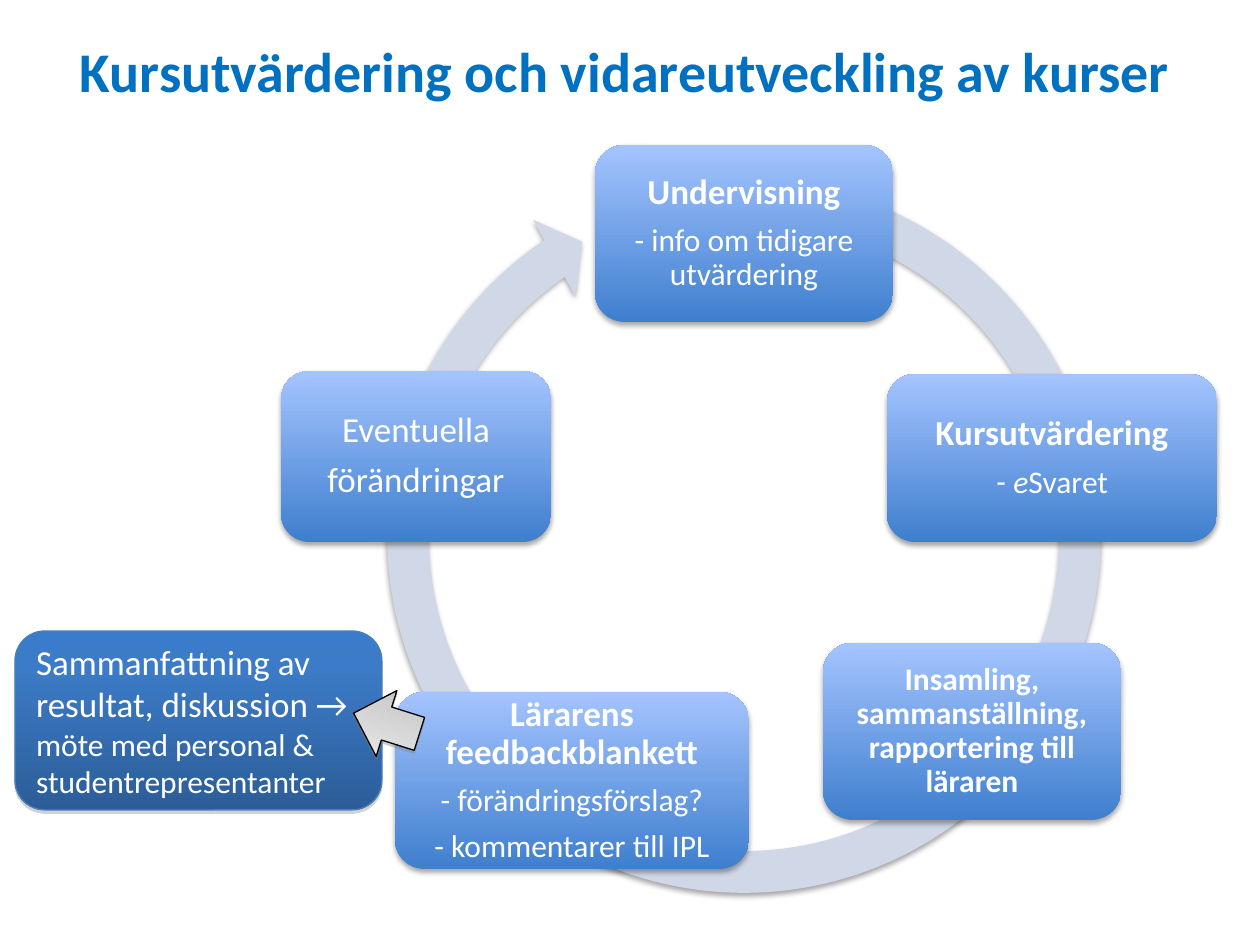
import pptx
import pptx.util
import pptx.dml.color
import pptx.enum.shapes
import pptx.enum.text
import pptx.oxml
import pptx.oxml.ns

RGB = pptx.dml.color.RGBColor
SHAPE = pptx.enum.shapes.MSO_SHAPE
ALIGN = pptx.enum.text.PP_ALIGN
ANCHOR = pptx.enum.text.MSO_ANCHOR

PX = 914400 / 126
FONT = "Calibri"
WHITE = RGB(0xFF, 0xFF, 0xFF)
BLACK = RGB(0, 0, 0)
GRAY = RGB(0x80, 0x80, 0x80)
TITLE_BLUE = RGB(0x00, 0x70, 0xC0)
RING = RGB(0xD0, 0xD8, 0xE8)
NOTE_LINE = RGB(0x4A, 0x7E, 0xBB)
STEP_STOPS = [(0, RGB(0x3F, 0x7F, 0xCE)), (100, RGB(0xA4, 0xC4, 0xFF))]
NOTE_STOPS = [(0, RGB(0x3A, 0x7C, 0xCB)), (20, RGB(0x3C, 0x7B, 0xC7)),
              (100, RGB(0x2C, 0x5D, 0x98))]
ARROW_STOPS = [(0, RGB(0xED, 0xED, 0xED)), (65, RGB(0xD0, 0xD0, 0xD0)),
               (100, RGB(0xBC, 0xBC, 0xBC))]

STEPS = [
    ((595, 145, 298, 177), 10, [[("Undervisning", 20, "b")],
                                [("- info om tidigare utvärdering", 18, "")]]),
    ((887, 374, 330, 168), 10, [[("Kursutvärdering", 20, "b")],
                                [("- ", 19, "i"), ("e", 18, "i"), ("Svaret", 18, "")]]),
    ((823, 643, 298, 177), 9,
     [[("Insamling, sammanställning, rapportering till läraren", 18, "b")]]),
    ((395, 692, 354, 177), 10, [[("Lärarens feedbackblankett", 20, "b")],
                                [("- förändringsförslag?", 18, "")],
                                [("- kommentarer till IPL", 18, "")]]),
    ((281, 371, 270, 171), 10, [[("Eventuella", 20, "")], [("förändringar", 20, "")]]),
]


def px(n):
    return pptx.util.Emu(round(n * PX))


def add_xml(parent, body):
    ns = pptx.oxml.ns.nsdecls("a")
    el = pptx.oxml.parse_xml(body.replace(" ", f" {ns} ", 1))
    parent.append(el)
    return el


def set_gradient(sp, stops, angle):
    sp.fill.gradient()
    grad = sp._element.spPr.find(pptx.oxml.ns.qn("a:gradFill"))
    for child in list(grad):
        grad.remove(child)
    gs = "".join(f'<a:gs pos="{pos * 1000}"><a:srgbClr val="{color}"/></a:gs>'
                 for pos, color in stops)
    add_xml(grad, f"<a:gsLst >{gs}</a:gsLst>")
    add_xml(grad, f'<a:lin ang="{angle * 60000}" scaled="0"/>')


def set_shadow(sp, color, alpha, blur, dist):
    sp.shadow.inherit = False
    effects = sp._element.spPr.find(pptx.oxml.ns.qn("a:effectLst"))
    add_xml(effects, f'<a:outerShdw blurRad="{round(blur * 12700)}" '
                     f'dist="{round(dist * 12700)}" dir="5400000" rotWithShape="0">'
                     f'<a:srgbClr val="{color}"><a:alpha val="{alpha * 1000}"/>'
                     f'</a:srgbClr></a:outerShdw>')


def set_line(sp, color):
    if color is None:
        sp.line.fill.background()
    else:
        sp.line.color.rgb = color
        sp.line.width = pptx.util.Pt(0.75)


def add_runs(p, runs, color):
    for text, size, style in runs:
        r = p.add_run()
        r.text = text
        r.font.name = FONT
        r.font.size = pptx.util.Pt(size)
        r.font.bold = "b" in style
        r.font.italic = "i" in style
        r.font.color.rgb = color


def add_shape(s, kind, box, line=None):
    sp = s.shapes.add_shape(kind, *map(px, box))
    set_line(sp, line)
    return sp


def add_title(s):
    tf = s.shapes.add_textbox(*map(px, (54, 30, 1142, 81))).text_frame
    tf.word_wrap = True
    tf.paragraphs[0].alignment = ALIGN.CENTER
    add_runs(tf.paragraphs[0],
             [("Kursutvärdering och vidareutveckling av kurser", 32, "b")], TITLE_BLUE)


def add_ring(s):
    sp = add_shape(s, SHAPE.CIRCULAR_ARROW, (364, 156, 760, 760))
    for i, value in enumerate((0.055, 3.307, 141.406, 171.678, 0.058)):
        sp.adjustments[i] = value
    sp.fill.solid()
    sp.fill.fore_color.rgb = RING
    set_shadow(sp, BLACK, 35, 3.1, 1.8)


def add_step(s, box, inset, paragraphs):
    sp = add_shape(s, SHAPE.ROUNDED_RECTANGLE, box)
    set_gradient(sp, STEP_STOPS, 270)
    set_shadow(sp, BLACK, 35, 3.1, 1.8)
    tf = sp.text_frame
    tf.word_wrap = True
    tf.vertical_anchor = ANCHOR.MIDDLE
    tf.margin_left = tf.margin_right = tf.margin_top = tf.margin_bottom = px(inset)
    for i, runs in enumerate(paragraphs):
        p = tf.add_paragraph() if i else tf.paragraphs[0]
        p.alignment = ALIGN.CENTER
        p.line_spacing = 0.9
        p.space_after = pptx.util.Pt(7)
        add_runs(p, runs, WHITE)


def add_note(s):
    sp = add_shape(s, SHAPE.ROUNDED_RECTANGLE, (15, 631, 367, 179), NOTE_LINE)
    set_gradient(sp, NOTE_STOPS, 90)
    set_shadow(sp, GRAY, 35, 0, 1.8)
    tf = sp.text_frame
    tf.word_wrap = True
    tf.vertical_anchor = ANCHOR.MIDDLE
    p = tf.paragraphs[0]
    p.alignment = ALIGN.LEFT
    add_runs(p, [("Sammanfattning av resultat, diskussion → ", 20, ""),
                 ("möte med personal & studentrepresentanter", 18, "")], WHITE)


def add_note_arrow(s):
    sp = add_shape(s, SHAPE.RIGHT_ARROW, (352, 689, 69, 69), BLACK)
    sp.rotation = 197.5
    set_gradient(sp, ARROW_STOPS, 90)
    set_shadow(sp, GRAY, 38, 0, 1.6)


def main():
    prs = pptx.Presentation()
    prs.slide_width, prs.slide_height = px(1260), px(945)
    s = prs.slides.add_slide(prs.slide_layouts[6])
    add_title(s)
    add_ring(s)
    for box, inset, paragraphs in STEPS:
        add_step(s, box, inset, paragraphs)
    add_note(s)
    add_note_arrow(s)
    prs.save("out.pptx")


if __name__ == "__main__":
    main()
